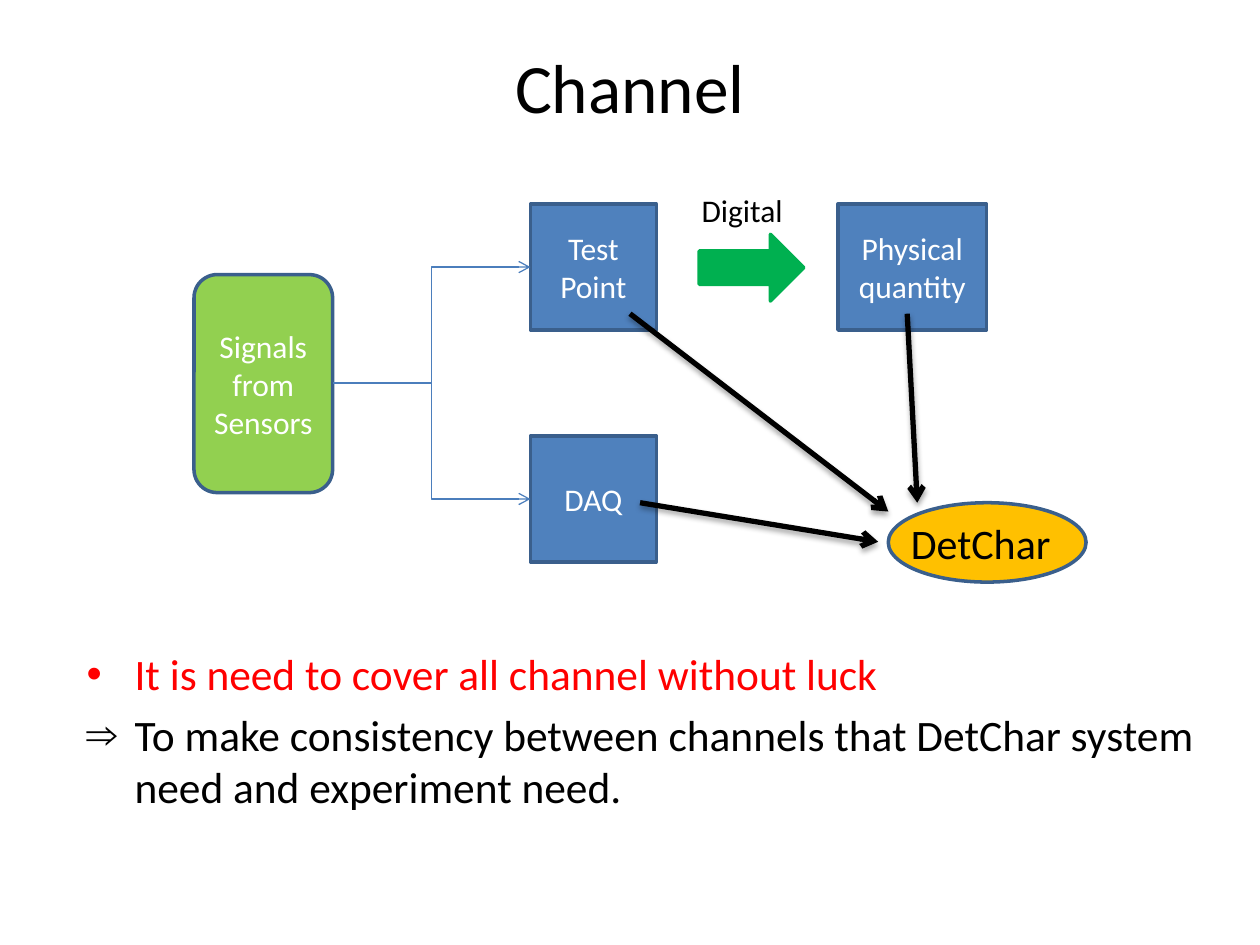
from lxml.etree import SubElement
from pptx import Presentation
from pptx.dml.color import RGBColor
from pptx.enum.shapes import MSO_CONNECTOR as Connector, MSO_SHAPE as Shape
from pptx.enum.text import MSO_ANCHOR as Anchor, MSO_AUTO_SIZE as AutoSize, PP_ALIGN as Align
from pptx.oxml.ns import qn
from pptx.util import Inches, Pt

BLACK = RGBColor(0x00, 0x00, 0x00)
WHITE = RGBColor(0xFF, 0xFF, 0xFF)
RED = RGBColor(0xFF, 0x00, 0x00)
BLUE = RGBColor(0x4F, 0x81, 0xBD)
OUTLINE = RGBColor(0x3A, 0x5F, 0x8C)
BRANCH = RGBColor(0x4B, 0x7E, 0xBC)
LIME = RGBColor(0x92, 0xD0, 0x50)
GREEN = RGBColor(0x00, 0xB0, 0x50)
AMBER = RGBColor(0xFF, 0xC0, 0x00)

presentation = Presentation()
presentation.slide_width = Inches(10)
presentation.slide_height = Inches(7.5)
slide = presentation.slides.add_slide(presentation.slide_layouts[6])
COLUMN = presentation.slide_width / 100
ROW = presentation.slide_height / 75


def place(left, top, width, height):
    return round(left * COLUMN), round(top * ROW), round(width * COLUMN), round(height * ROW)


def write(text_frame, lines, size, colors, align):
    text_frame.text = "\n".join(lines)
    for paragraph, color in zip(text_frame.paragraphs, colors):
        paragraph.alignment = align
        font = paragraph.runs[0].font
        font.name = "Calibri"
        font.size = Pt(size)
        font.color.rgb = color


title = slide.shapes.add_textbox(*place(5, 3, 90, 7.7))
title.text_frame.word_wrap = True
title.text_frame.vertical_anchor = Anchor.MIDDLE
write(title.text_frame, ["Channel"], 39.6, [BLACK], Align.CENTER)

body = slide.shapes.add_textbox(*place(5.9, 50.9, 90, 12.6))
body.text_frame.word_wrap = True
write(body.text_frame, [
    "It is need to cover all channel without luck",
    "To make consistency between channels that DetChar system need and experiment need.",
], 24.8, [RED, BLACK], Align.LEFT)
for paragraph, bullet in zip(body.text_frame.paragraphs, "•⇒"):
    paragraph.space_before = Pt(5)
    properties = paragraph._p.get_or_add_pPr()
    properties.set("marL", str(Inches(0.38)))
    properties.set("indent", str(-Inches(0.38)))
    SubElement(properties, qn("a:buFont"), typeface="Arial")
    SubElement(properties, qn("a:buChar"), char=bullet)

nodes = [
    (Shape.OVAL, (70.5, 39.9, 15.7, 6.3), AMBER, OUTLINE, ""),
    (Shape.RECTANGLE, (42.1, 16.2, 10, 10), BLUE, OUTLINE, "Test Point"),
    (Shape.RECTANGLE, (42.1, 34.6, 10, 10), BLUE, OUTLINE, "DAQ"),
    (Shape.RIGHT_ARROW, (55.5, 18.6, 8.3, 5.3), GREEN, GREEN, ""),
    (Shape.RECTANGLE, (66.5, 16.2, 11.8, 10), BLUE, OUTLINE, "Physical quantity"),
    (Shape.ROUNDED_RECTANGLE, (15.4, 21.8, 11, 17.3), LIME, OUTLINE, "Signals from Sensors"),
]
for kind, box, fill, outline, text in nodes:
    shape = slide.shapes.add_shape(kind, *place(*box))
    shape.shadow.inherit = False
    shape.fill.solid()
    shape.fill.fore_color.rgb = fill
    shape.line.color.rgb = outline
    shape.line.width = Pt(2)
    if text:
        shape.text_frame.word_wrap = True
        shape.text_frame.vertical_anchor = Anchor.MIDDLE
        write(shape.text_frame, [text], 18, [WHITE], Align.CENTER)

arrows = [
    (Connector.STRAIGHT, (50, 24.9, 70.5, 40.6), BLACK, 3),
    (Connector.STRAIGHT, (72, 24.9, 72.8, 39.9), BLACK, 3),
    (Connector.STRAIGHT, (50.8, 39.9, 69.7, 43), BLACK, 3),
    (Connector.ELBOW, (26.4, 30.4, 42.1, 21.2), BRANCH, 0.75),
    (Connector.ELBOW, (26.4, 30.4, 42.1, 39.6), BRANCH, 0.75),
]
for kind, ends, color, width in arrows:
    arrow = slide.shapes.add_connector(kind, *place(*ends))
    arrow.line.color.rgb = color
    arrow.line.width = Pt(width)
    SubElement(arrow.line._get_or_add_ln(), qn("a:tailEnd"), type="arrow")
    effects = SubElement(arrow._element.spPr, qn("a:effectLst"))
    if kind == Connector.STRAIGHT:
        shadow = SubElement(effects, qn("a:outerShdw"), blurRad=str(Pt(3.1)),
                            dist=str(Pt(1.8)), dir="5400000", rotWithShape="0")
        shade = SubElement(shadow, qn("a:srgbClr"), val=str(BLACK))
        SubElement(shade, qn("a:alpha"), val="35000")

labels = [
    ("Digital", (54.7, 14.7, 8.5, 4), 18),
    ("DetChar", (71.3, 40.6, 13.2, 5), 24),
]
for text, box, size in labels:
    label = slide.shapes.add_textbox(*place(*box))
    label.text_frame.word_wrap = False
    label.text_frame.auto_size = AutoSize.SHAPE_TO_FIT_TEXT
    write(label.text_frame, [text], size, [BLACK], Align.LEFT)

presentation.save("out.pptx")
